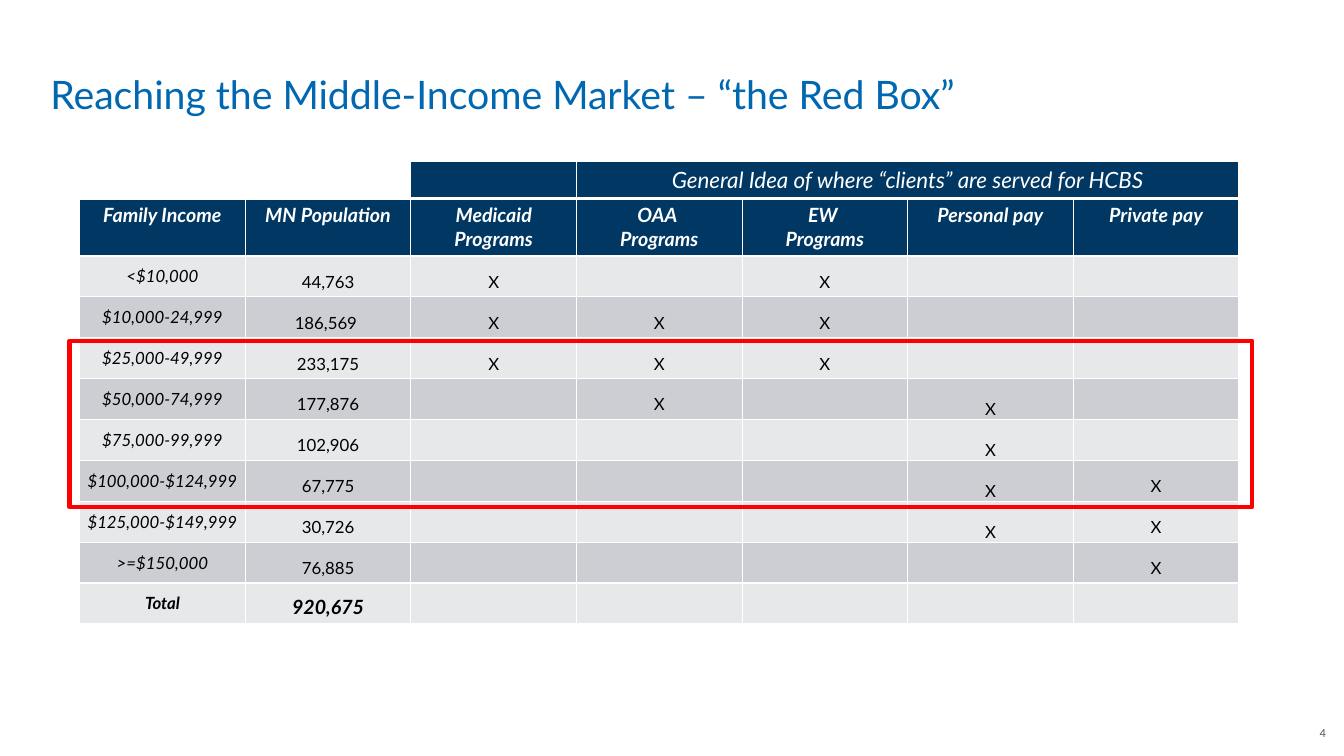
import pptx
import pptx.dml.color
import pptx.enum.shapes
import pptx.enum.text
import pptx.util
from lxml import etree
from pptx.util import Inches, Pt

RGBColor = pptx.dml.color.RGBColor
ALIGN = pptx.enum.text.PP_ALIGN
ANCHOR = pptx.enum.text.MSO_ANCHOR

# Content
TITLE = "Reaching the Middle-Income Market – “the Red Box”"
PAGE_NUMBER = "4"
SERVED_HEADING = "General Idea of where “clients” are served for HCBS"
HEADINGS = ["Family Income", "MN Population", "Medicaid Programs",
            "OAA \nPrograms", "EW \nPrograms", "Personal pay", "Private pay"]
# Income band, population, columns marked with an X
INCOME_BANDS = [
    ("<$10,000", "44,763", (2, 4)),
    ("$10,000-24,999", "186,569 ", (2, 3, 4)),
    ("$25,000-49,999", "233,175", (2, 3, 4)),
    ("$50,000-74,999", "177,876", (3, 5)),
    ("$75,000-99,999", "102,906", (5,)),
    ("$100,000-$124,999", "67,775", (5, 6)),
    ("$125,000-$149,999", "30,726", (5, 6)),
    (">=$150,000", "76,885", (6,)),
    ("Total", "920,675", ()),
]
PERSONAL_PAY = 5

# Colours
TITLE_BLUE = RGBColor(0x00, 0x67, 0xB1)
NAVY = RGBColor(0x00, 0x37, 0x63)
LIGHT_BAND = RGBColor(0xE7, 0xE8, 0xEA)
DARK_BAND = RGBColor(0xCC, 0xCE, 0xD3)
WHITE = RGBColor(0xFF, 0xFF, 0xFF)
BLACK = RGBColor(0x00, 0x00, 0x00)
GREY = RGBColor(0x58, 0x59, 0x5B)
RED = RGBColor(0xFF, 0x00, 0x00)

# Table measures
TOP_HEIGHT, HEADING_HEIGHT = Inches(0.37), Inches(0.57)
BAND_HEIGHT = int(Inches(3.65) / len(INCOME_BANDS))
TABLE_WIDTH = Inches(11.5)


def write(frame, text, size, color, align, font="Lato", bold=False, italic=False):
    frame.text = text
    for paragraph in frame.paragraphs:
        paragraph.alignment = align
        for run in paragraph.runs:
            run.font.name = font
            run.font.size = Pt(size)
            run.font.bold = bold
            run.font.italic = italic
            run.font.color.rgb = color


def add_label(slide, box, margins, anchor):
    frame = slide.shapes.add_textbox(*map(Inches, box)).text_frame
    frame.word_wrap = True
    frame.vertical_anchor = anchor
    (frame.margin_left, frame.margin_top,
     frame.margin_right, frame.margin_bottom) = map(Inches, margins)
    return frame


def set_borders(cell, top, bottom):
    properties = cell._tc.get_or_add_tcPr()
    widths = {"lnL": 1, "lnR": 1, "lnT": top, "lnB": bottom}
    for place, (side, width) in enumerate(widths.items()):
        line = etree.Element(pptx.oxml.ns.qn("a:" + side), w=str(Pt(width)))
        fill = etree.SubElement(line, pptx.oxml.ns.qn("a:solidFill"))
        etree.SubElement(fill, pptx.oxml.ns.qn("a:srgbClr"), val=str(WHITE))
        properties.insert(place, line)


def no_margins(cell):
    cell.margin_left = cell.margin_right = cell.margin_top = cell.margin_bottom = 0


def add_income_table(slide):
    row_count = len(INCOME_BANDS) + 2
    height = TOP_HEIGHT + HEADING_HEIGHT + BAND_HEIGHT * len(INCOME_BANDS)
    table = slide.shapes.add_table(row_count, len(HEADINGS), Inches(0.79),
                                   Inches(1.6), TABLE_WIDTH, height).table
    table.first_row = table.horz_banding = False
    for column in table.columns:
        column.width = int(TABLE_WIDTH / len(HEADINGS))
    heights = [TOP_HEIGHT, HEADING_HEIGHT] + [BAND_HEIGHT] * len(INCOME_BANDS)
    for row, row_height in zip(table.rows, heights):
        row.height = row_height

    # Heading rows
    table.cell(0, 3).merge(table.cell(0, 6))
    write(table.cell(0, 3).text_frame, SERVED_HEADING, 16, WHITE, ALIGN.CENTER,
          italic=True)
    for column, heading in enumerate(HEADINGS):
        write(table.cell(1, column).text_frame, heading, 14, WHITE, ALIGN.CENTER,
              bold=True, italic=True)

    # Income bands
    for row, (band, population, served) in enumerate(INCOME_BANDS, start=2):
        total = band == "Total"
        band_cell, population_cell = table.cell(row, 0), table.cell(row, 1)
        write(band_cell.text_frame, band, 12, BLACK, ALIGN.CENTER,
              bold=total, italic=True)
        band_cell.vertical_anchor = ANCHOR.MIDDLE
        no_margins(band_cell)
        write(population_cell.text_frame, population, 14 if total else 12, BLACK,
              ALIGN.CENTER, bold=total, italic=total)
        population_cell.vertical_anchor = ANCHOR.BOTTOM
        for column in served:
            mark = table.cell(row, column)
            write(mark.text_frame, "X", 12, BLACK, ALIGN.CENTER)
            mark.vertical_anchor = ANCHOR.BOTTOM
            if column == PERSONAL_PAY:
                no_margins(mark)

    # Fills and borders
    for row in range(row_count):
        for column in range(len(HEADINGS)):
            cell = table.cell(row, column)
            if row == 0 and column < 2:
                cell.fill.background()
            else:
                cell.fill.solid()
                cell.fill.fore_color.rgb = (
                    NAVY if row < 2 else DARK_BAND if row % 2 else LIGHT_BAND)
            if not cell.text_frame.text:
                no_margins(cell)
            set_borders(cell, 3 if row == 1 else 1, 3 if row == 0 else 1)


def main():
    deck = pptx.Presentation()
    deck.slide_width, deck.slide_height = Inches(13.33), Inches(7.5)
    slide = deck.slides.add_slide(deck.slide_layouts[6])

    # Title and page number
    title = add_label(slide, (0.5, 0.8, 10.66, 0.42), (0, 0.05, 0.1, 0.05),
                      ANCHOR.BOTTOM)
    write(title, TITLE, 28, TITLE_BLUE, ALIGN.LEFT)
    title.paragraphs[0].line_spacing = 0.9
    page = add_label(slide, (12.94, 7.2, 0.21, 0.13), (0, 0, 0, 0), ANCHOR.MIDDLE)
    write(page, PAGE_NUMBER, 8.8, GREY, ALIGN.RIGHT, font="Calibri")

    add_income_table(slide)

    # Red box around the middle-income bands
    red_box = slide.shapes.add_shape(
        pptx.enum.shapes.MSO_SHAPE.RECTANGLE,
        Inches(0.69), Inches(3.38), Inches(11.73), Inches(1.65))
    red_box.shadow.inherit = False
    red_box.fill.background()
    red_box.line.color.rgb = RED
    red_box.line.width = Pt(3)

    deck.save("out.pptx")


if __name__ == "__main__":
    main()
